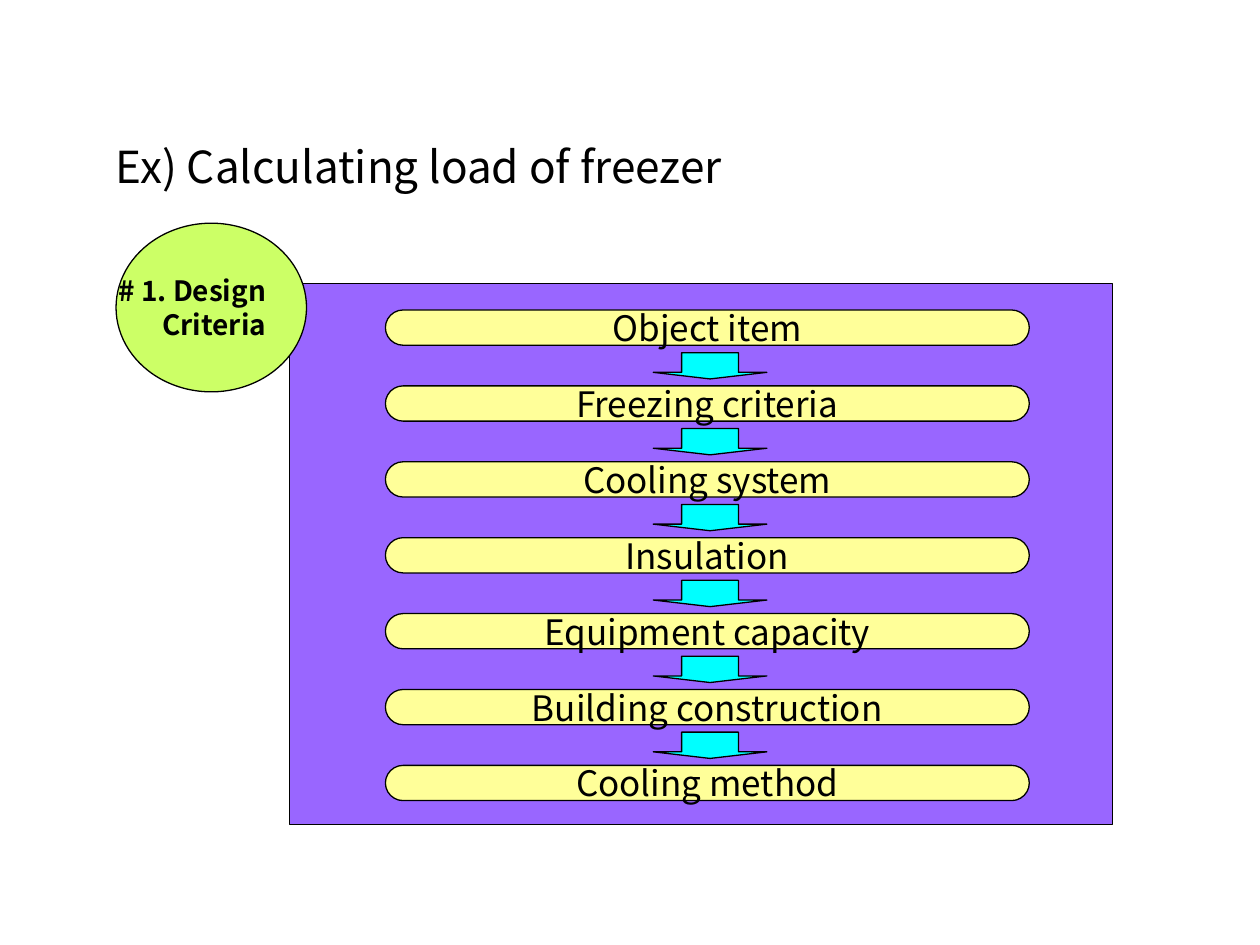
from pptx import Presentation
from pptx.dml.color import RGBColor
from pptx.enum.shapes import MSO_SHAPE
from pptx.enum.text import MSO_ANCHOR, PP_ALIGN
from pptx.util import Cm, Pt

RECTANGLE = MSO_SHAPE.RECTANGLE
PILL = MSO_SHAPE.ROUNDED_RECTANGLE
ARROW = MSO_SHAPE.DOWN_ARROW
OVAL = MSO_SHAPE.OVAL
LEFT, CENTER, RIGHT = PP_ALIGN.LEFT, PP_ALIGN.CENTER, PP_ALIGN.RIGHT
MIDDLE = MSO_ANCHOR.MIDDLE

FONT = "Noto Sans CJK KR"
COLORS = {
    "ink": "000000",
    "panel": "9966FF",
    "step": "FFFF99",
    "arrow": "00FFFF",
    "badge": "CCFF66",
}
STEPS = [
    "Object item",
    "Freezing criteria",
    "Cooling system",
    "Insulation",
    "Equipment capacity",
    "Building construction",
    "Cooling method",
]


def write_text(shape, text, size=20, align=CENTER, bold=False, wrap=False):
    frame = shape.text_frame
    frame.word_wrap = wrap
    frame.vertical_anchor = MIDDLE
    frame.text = text
    for paragraph in frame.paragraphs:
        paragraph.alignment = align
        for run in paragraph.runs:
            run.font.name = FONT
            run.font.size = Pt(size)
            run.font.bold = bold
            run.font.color.rgb = RGBColor.from_string(COLORS["ink"])


def add_box(shapes, kind, left, top, width, height, color):
    shape = shapes.add_shape(kind, Cm(left), Cm(top), Cm(width), Cm(height))
    shape.shadow.inherit = False
    shape.fill.solid()
    shape.fill.fore_color.rgb = RGBColor.from_string(COLORS[color])
    shape.line.color.rgb = RGBColor.from_string(COLORS["ink"])
    shape.line.width = Pt(0.75)
    return shape


def place_title(slide, left, top, width, height):
    title = slide.shapes.title
    title.left, title.top = Cm(left), Cm(top)
    title.width, title.height = Cm(width), Cm(height)
    write_text(title, "Ex) Calculating load of freezer", size=25.2, align=LEFT, wrap=True)


def add_flow(slide, left, top, width, height):
    shapes = slide.shapes.add_group_shape().shapes
    add_box(shapes, RECTANGLE, left, top, width, height, "panel")
    pitch = 1.53

    # Steps
    for index, text in enumerate(STEPS):
        step = add_box(shapes, PILL, left + 1.93, top + 0.53 + index * pitch,
                       12.98, 0.71, "step")
        step.adjustments[0] = 0.5
        write_text(step, text)

    # Arrows between the steps
    for index in range(len(STEPS) - 1):
        arrow = add_box(shapes, ARROW, left + 7.33, top + 1.39 + index * pitch,
                        2.29, 0.53, "arrow")
        arrow.adjustments[0] = 0.5
        arrow.adjustments[1] = 0.25


def add_badge(slide, left, top, width, height):
    badge = add_box(slide.shapes, OVAL, left, top, width, height, "badge")
    write_text(badge, "# 1. Design\vCriteria", size=16, align=RIGHT, bold=True)


def main():
    presentation = Presentation()
    presentation.slide_width, presentation.slide_height = Cm(25.4), Cm(19.05)
    slide = presentation.slides.add_slide(presentation.slide_layouts[5])
    place_title(slide, 2.08, 2.74, 21.59, 1.22)
    add_flow(slide, 5.84, 5.72, 16.59, 10.9)
    add_badge(slide, 2.34, 4.5, 3.84, 3.4)
    presentation.save("out.pptx")


if __name__ == "__main__":
    main()
